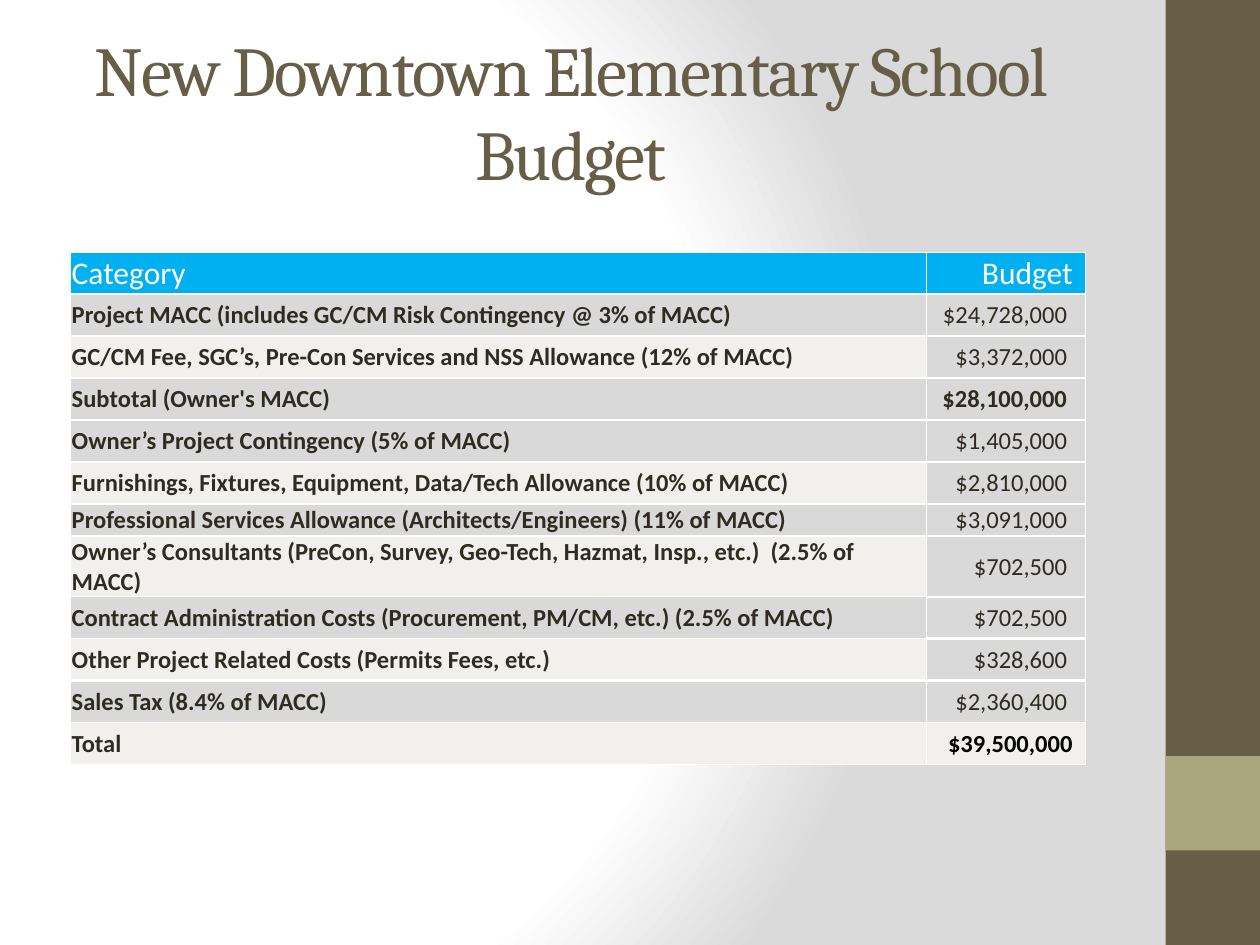
from dataclasses import dataclass

from pptx import Presentation
from pptx.dml.color import RGBColor
from pptx.enum.shapes import MSO_SHAPE
from pptx.enum.text import MSO_ANCHOR, MSO_AUTO_SIZE, PP_ALIGN
from pptx.oxml import parse_xml
from pptx.oxml.ns import nsdecls
from pptx.util import Pt

RECTANGLE = MSO_SHAPE.RECTANGLE
MIDDLE = MSO_ANCHOR.MIDDLE
NO_AUTOFIT = MSO_AUTO_SIZE.NONE
LEFT, CENTER, RIGHT = PP_ALIGN.LEFT, PP_ALIGN.CENTER, PP_ALIGN.RIGHT
TITLE_ONLY = 5


@dataclass(frozen=True)
class Theme:
    brown: str = "675E47"
    olive: str = "A9A57C"
    header: str = "00B0F0"
    gray: str = "D9D9D9"
    cream: str = "F1F0EC"
    white: str = "FFFFFF"
    edge_gray: str = "DADADA"
    ink: str = "2F2B20"
    black: str = "000000"
    title_font: str = "Cambria"
    body_font: str = "Calibri"
    title_size: int = 40
    header_size: int = 18
    body_size: int = 14


THEME = Theme()

TITLE = "New Downtown Elementary School  Budget "
BUDGET = [
    ("Category", "Budget"),
    ("Project MACC (includes GC/CM Risk Contingency @ 3% of MACC)", "$24,728,000 "),
    ("GC/CM Fee, SGC’s, Pre-Con Services and NSS Allowance (12% of MACC)", "$3,372,000 "),
    ("Subtotal (Owner's MACC)", "$28,100,000 "),
    ("Owner’s Project Contingency (5% of MACC)", "$1,405,000 "),
    ("Furnishings, Fixtures, Equipment, Data/Tech Allowance (10% of MACC)", "$2,810,000 "),
    ("Professional Services Allowance (Architects/Engineers) (11% of MACC)", "$3,091,000 "),
    ("Owner’s Consultants (PreCon, Survey, Geo-Tech, Hazmat, Insp., etc.)  (2.5% of MACC)",
     "$702,500 "),
    ("Contract Administration Costs (Procurement, PM/CM, etc.) (2.5% of MACC)", "$702,500 "),
    ("Other Project Related Costs (Permits Fees, etc.)", "$328,600 "),
    ("Sales Tax (8.4% of MACC)", "$2,360,400 "),
    ("Total", "$39,500,000"),
]
SUBTOTAL, COMPACT, TOTAL = 3, 6, len(BUDGET) - 1
COLUMN_WIDTHS = (489, 91)
ROW_HEIGHT, COMPACT_HEIGHT = 24, 18.5
# Horizontal rules drawn heavier, per column; rule n lies above row n
HEAVY_RULES = ({1, 3, 4, 10}, {1, 2, 3, 4, 5, 7, 8, 9, 10})


def set_background(page):
    """Radial fade from white to gray."""
    stops = "".join(
        f'<a:gs pos="{position * 1000}"><a:srgbClr val="{color}"/></a:gs>'
        for position, color in ((0, THEME.white), (75, THEME.white), (100, THEME.edge_gray)))
    background = parse_xml(
        f'<p:bg {nsdecls("p", "a")}><p:bgPr><a:gradFill rotWithShape="1">'
        f'<a:gsLst>{stops}</a:gsLst><a:path path="circle">'
        '<a:fillToRect l="20000" t="50000" r="100000" b="50000"/></a:path>'
        '</a:gradFill><a:effectLst/></p:bgPr></p:bg>')
    page.element.cSld.insert(0, background)


def add_band(page, top, height, color):
    band = page.shapes.add_shape(RECTANGLE, Pt(666), Pt(top), Pt(54), Pt(height))
    band.shadow.inherit = False
    band.fill.solid()
    band.fill.fore_color.rgb = RGBColor.from_string(color)
    band.line.fill.background()


def style_paragraph(para, font_name, size, color, align, bold=False):
    para.alignment = align
    para.font.name = font_name
    para.font.size = Pt(size)
    para.font.bold = bold
    para.font.color.rgb = RGBColor.from_string(color)


def set_title(page):
    title = page.shapes.title
    title.left, title.top, title.width, title.height = Pt(30), Pt(18), Pt(600), Pt(90)
    frame = title.text_frame
    frame.text = TITLE
    frame.word_wrap = True
    frame.auto_size = NO_AUTOFIT
    frame.vertical_anchor = MIDDLE
    para = frame.paragraphs[0]
    style_paragraph(para, THEME.title_font, THEME.title_size, THEME.brown, CENTER)
    para.runs[0].font._element.set("spc", "-100")


def rule_weight(rule, column):
    if rule in (0, len(BUDGET)):
        return 0.5
    return 1.5 if rule in HEAVY_RULES[column] else 1


def set_borders(cell, row, column):
    weights = {
        "lnL": 1 if column else 0.5,
        "lnR": 0.5 if column else 1,
        "lnT": rule_weight(row, column),
        "lnB": rule_weight(row + 1, column),
    }
    properties = cell._tc.get_or_add_tcPr()
    for index, (side, weight) in enumerate(weights.items()):
        properties.insert(index, parse_xml(
            f'<a:{side} {nsdecls("a")} w="{Pt(weight)}"><a:solidFill>'
            f'<a:srgbClr val="{THEME.white}"/></a:solidFill></a:{side}>'))


def cell_fill(row, column):
    if row == 0:
        return THEME.header
    if column and row != TOTAL:
        return THEME.gray
    # Banding starts again at gray after the subtotal
    band = row if row <= SUBTOTAL else row - SUBTOTAL
    return THEME.gray if band % 2 else THEME.cream


def fill_cell(cell, text, row, column):
    cell.text = text
    cell.vertical_anchor = MIDDLE
    cell.margin_left = cell.margin_top = Pt(0.5)
    cell.margin_right = Pt(7.5 if column else 0.5)
    cell.margin_bottom = Pt(0)
    cell.fill.solid()
    cell.fill.fore_color.rgb = RGBColor.from_string(cell_fill(row, column))
    set_borders(cell, row, column)

    size, color = THEME.body_size, THEME.ink
    if row == 0:
        size, color = THEME.header_size, THEME.white
    elif row == TOTAL and column:
        color = THEME.black
    bold = row > 0 and (column == 0 or row in (SUBTOTAL, TOTAL))
    style_paragraph(cell.text_frame.paragraphs[0], THEME.body_font, size, color,
                    RIGHT if column else LEFT, bold)


def add_budget_table(page):
    heights = [COMPACT_HEIGHT if row == COMPACT else ROW_HEIGHT for row in range(len(BUDGET))]
    table = page.shapes.add_table(
        len(BUDGET), len(COLUMN_WIDTHS), Pt(40.5), Pt(144),
        Pt(sum(COLUMN_WIDTHS)), Pt(sum(heights))).table
    for column, width in enumerate(COLUMN_WIDTHS):
        table.columns[column].width = Pt(width)
    for row, texts in enumerate(BUDGET):
        table.rows[row].height = Pt(heights[row])
        for column, text in enumerate(texts):
            fill_cell(table.cell(row, column), text, row, column)


def main():
    deck = Presentation()
    deck.slide_width, deck.slide_height = Pt(720), Pt(540)
    page = deck.slides.add_slide(deck.slide_layouts[TITLE_ONLY])

    # Backdrop and side bar
    set_background(page)
    add_band(page, 0, 540, THEME.brown)
    add_band(page, 432, 54, THEME.olive)

    # Content
    set_title(page)
    add_budget_table(page)

    deck.save("out.pptx")


if __name__ == "__main__":
    main()
